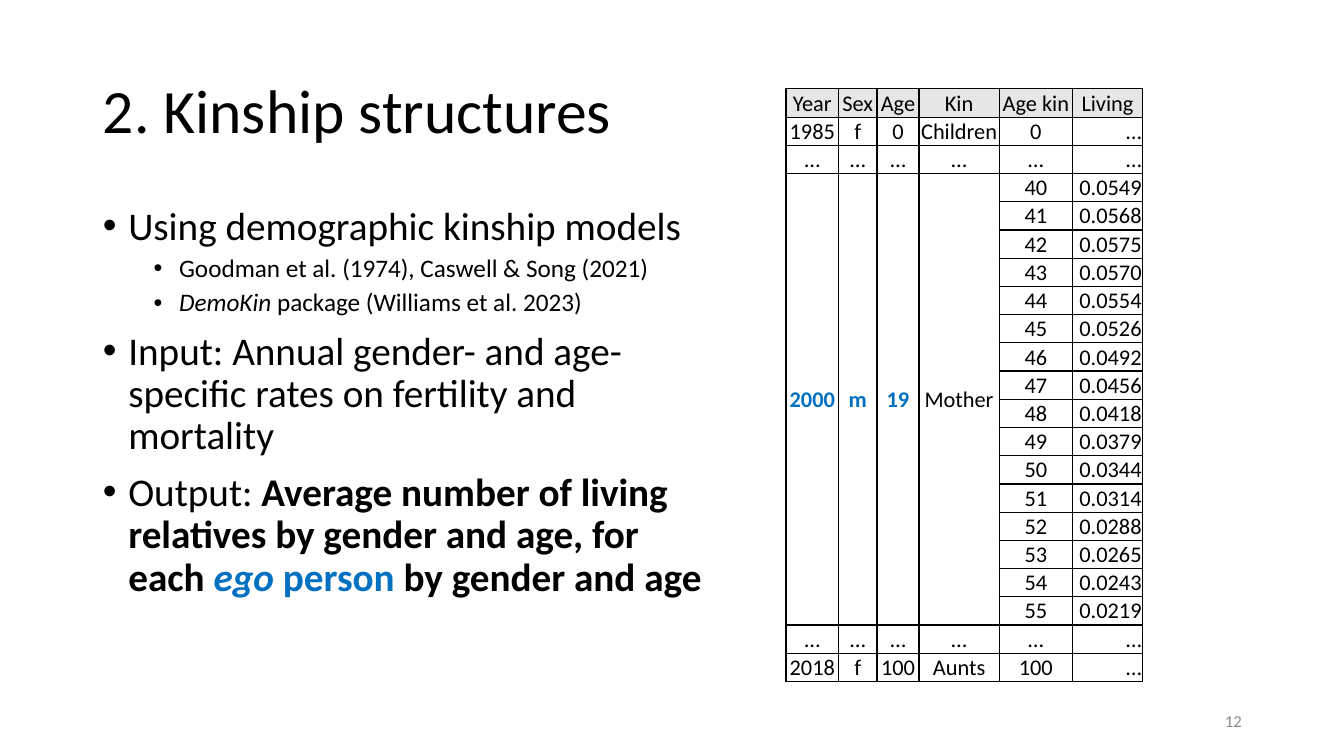
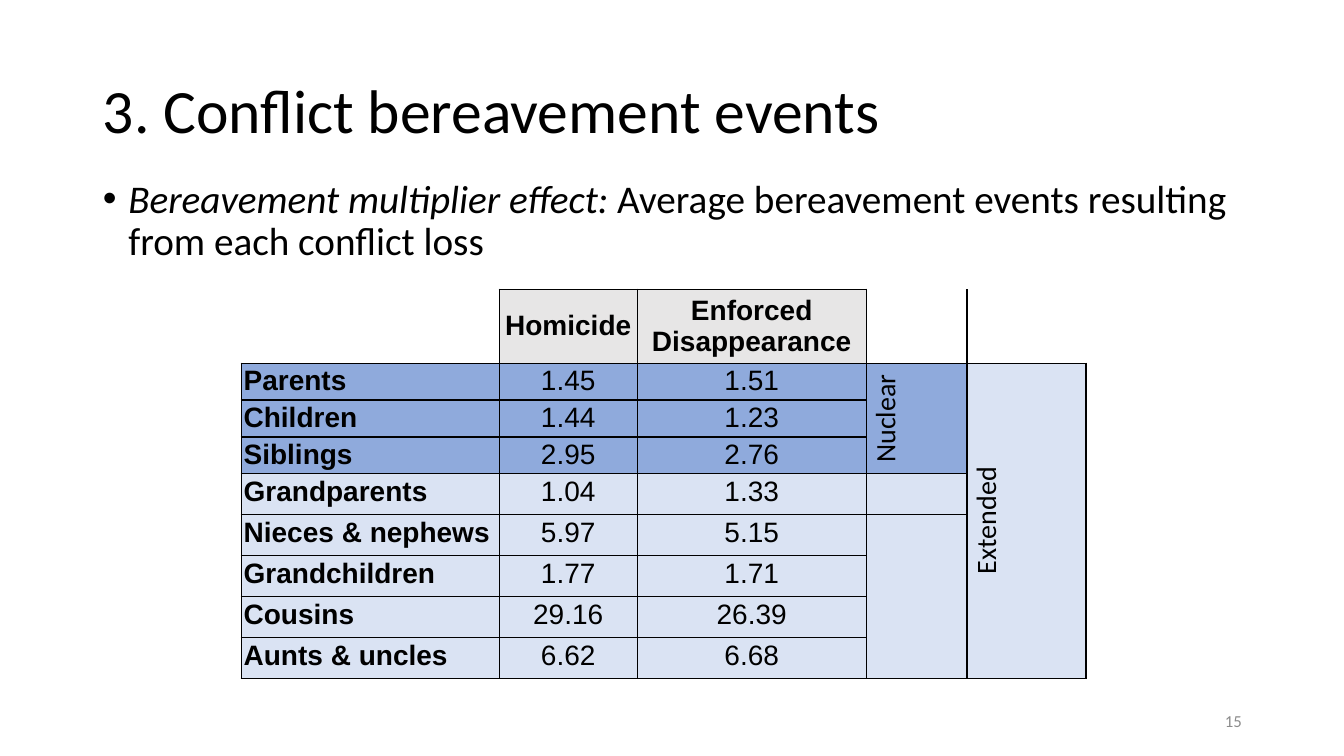
from dataclasses import dataclass
from typing import Any, NamedTuple

from lxml import etree
from pptx import Presentation
from pptx.dml.color import RGBColor
from pptx.enum.text import MSO_ANCHOR, MSO_AUTO_SIZE, PP_ALIGN
from pptx.oxml.ns import qn
from pptx.util import Cm, Pt

LEFT, CENTER, RIGHT = PP_ALIGN.LEFT, PP_ALIGN.CENTER, PP_ALIGN.RIGHT
TOP, MIDDLE, BOTTOM = MSO_ANCHOR.TOP, MSO_ANCHOR.MIDDLE, MSO_ANCHOR.BOTTOM
NO_AUTOFIT = MSO_AUTO_SIZE.NONE
TITLE_AND_CONTENT = 1
PLAIN_TABLE_STYLE = "{2D5ABB26-0587-4C30-8999-92F81FD0307C}"
ALL_SIDES = "LRTB"
ELLIPSIS = "…"


@dataclass(frozen=True)
class Theme:
    ink: str = "000000"
    accent: str = "0070C0"
    muted: str = "8C8C8C"
    header: str = "E7E6E6"
    nuclear: str = "8FAADC"
    extended: str = "DAE3F3"
    text_font: str = "Calibri"
    table_font: str = "Arial"
    title_size: int = 44
    body_size: int = 28
    detail_size: int = 18
    number_size: int = 12
    kin_size: int = 16
    multiplier_size: int = 20
    border_width: int = 1


THEME = Theme()


class Box(NamedTuple):
    """Left, top, width and height in centimetres."""
    left: float
    top: float
    width: float
    height: float


class Run(NamedTuple):
    text: str
    bold: bool = False
    italic: bool = False
    color: str = THEME.ink


class Bullet(NamedTuple):
    runs: list[Run]
    level: int = 0


class BulletStyle(NamedTuple):
    size: int
    space_before: int
    margin: float


@dataclass(frozen=True)
class Cell:
    text: str = ""
    size: int = THEME.kin_size
    font: str = THEME.text_font
    bold: bool = False
    color: str = THEME.ink
    align: Any = CENTER
    anchor: Any = MIDDLE
    fill: str = ""
    sides: str = ALL_SIDES
    rows: int = 1
    upward: bool = False


@dataclass(frozen=True)
class Grid:
    left: float
    top: float
    columns: list[float]
    rows: list[float]
    margin: float
    bottom_margin: float


TITLE_BOX = Box(2.34, 1.02, 29.21, 3.68)
NUMBER_BOX = Box(23.93, 17.65, 7.62, 1.02)
HANGING = 0.64
BULLET_STYLES = [
    BulletStyle(THEME.body_size, 10, HANGING),
    BulletStyle(THEME.detail_size, 5, 3 * HANGING),
]

KINSHIP_BULLETS = [
    Bullet([Run("Using demographic kinship models")]),
    Bullet([Run("Goodman et al. (1974), Caswell & Song (2021)")], 1),
    Bullet([Run("DemoKin ", italic=True), Run("package (Williams et al. 2023)")], 1),
    Bullet([Run("Input: Annual gender- and age-specific rates on fertility and mortality")]),
    Bullet([
        Run("Output: "),
        Run("Average number of living relatives by gender and age, for each ", bold=True),
        Run("ego", bold=True, italic=True, color=THEME.accent),
        Run(" person ", bold=True, color=THEME.accent),
        Run("by gender and age", bold=True),
    ]),
]
MULTIPLIER_BULLETS = [
    Bullet([
        Run("Bereavement multiplier effect: ", italic=True),
        Run("Average bereavement events resulting from each conflict loss"),
    ]),
]

KIN_HEADINGS = ["Year", "Sex", "Age", "Kin", "Age kin", "Living"]
GAP_ROW = [ELLIPSIS] * len(KIN_HEADINGS)
EGO = ["2000", "m", "19", "Mother"]
FIRST_MOTHER_AGE = 40
LIVING_MOTHERS = [
    "0.0549", "0.0568", "0.0575", "0.0570", "0.0554", "0.0526", "0.0492", "0.0456",
    "0.0418", "0.0379", "0.0344", "0.0314", "0.0288", "0.0265", "0.0243", "0.0219",
]
ROWS_BEFORE = [["1985", "f", "0", "Children", "0", ELLIPSIS], GAP_ROW]
ROWS_AFTER = [GAP_ROW, ["2018", "f", "100", "Aunts", "100", ELLIPSIS]]
KIN_ROW_COUNT = 1 + len(ROWS_BEFORE) + len(LIVING_MOTHERS) + len(ROWS_AFTER)
KIN_GRID = Grid(19.81, 2.24, [1.32, 0.97, 1.06, 2.02, 1.85, 1.76],
                [0.71] * KIN_ROW_COUNT, 0.02, 0)

NUCLEAR_KIN = [
    ("Parents", "1.45", "1.51"),
    ("Children", "1.44", "1.23"),
    ("Siblings", "2.95", "2.76"),
]
OTHER_KIN = [
    ("Grandparents", "1.04", "1.33"),
    ("Nieces & nephews", "5.97", "5.15"),
    ("Grandchildren", "1.77", "1.71"),
    ("Cousins", "29.16", "26.39"),
    ("Aunts & uncles", "6.62", "6.68"),
]
MULTIPLIER_GRID = Grid(
    6.08, 7.29, [6.5, 3.48, 5.77, 2.54, 3],
    [1.86] + [0.93] * len(NUCLEAR_KIN) + [1.02] * len(OTHER_KIN), 0.06, 0.06)


def apply_format(target: Any, values: dict[str, Any]) -> None:
    for name, value in values.items():
        setattr(target, name, value)


def add_run(paragraph: Any, run: Run, size: int, font: str = THEME.text_font) -> None:
    piece = paragraph.add_run()
    piece.text = run.text
    apply_format(piece.font, {"name": font, "size": Pt(size),
                              "bold": run.bold, "italic": run.italic})
    piece.font.color.rgb = RGBColor.from_string(run.color)


def place(shape: Any, box: Box) -> None:
    apply_format(shape, {side: Cm(length) for side, length in box._asdict().items()})


def write_line(shape: Any, box: Box, run: Run, size: int, paragraph_format: dict[str, Any]) -> None:
    """Fill a shape with a single vertically centred paragraph."""
    place(shape, box)
    apply_format(shape.text_frame, {"word_wrap": True, "auto_size": NO_AUTOFIT,
                                    "vertical_anchor": MIDDLE})
    paragraph = shape.text_frame.paragraphs[0]
    apply_format(paragraph, paragraph_format)
    add_run(paragraph, run, size)


def write_bullets(body: Any, box: Box, bullets: list[Bullet]) -> None:
    place(body, box)
    frame = body.text_frame
    apply_format(frame, {"word_wrap": True, "auto_size": NO_AUTOFIT, "vertical_anchor": TOP})
    for index, bullet in enumerate(bullets):
        paragraph = frame.add_paragraph() if index else frame.paragraphs[0]
        style = BULLET_STYLES[bullet.level]
        apply_format(paragraph, {"level": bullet.level, "line_spacing": 0.9,
                                 "space_before": Pt(style.space_before), "alignment": LEFT})
        properties = paragraph._p.get_or_add_pPr()
        properties.set("marL", str(Cm(style.margin)))
        properties.set("indent", str(-Cm(HANGING)))
        etree.SubElement(properties, qn("a:buFont")).set("typeface", "Arial")
        etree.SubElement(properties, qn("a:buChar")).set("char", "•")
        for run in bullet.runs:
            add_run(paragraph, run, style.size)


def add_content_slide(deck: Any, title: str, number: str, body_box: Box,
                      bullets: list[Bullet]) -> Any:
    slide = deck.slides.add_slide(deck.slide_layouts[TITLE_AND_CONTENT])
    write_line(slide.shapes.title, TITLE_BOX, Run(title), THEME.title_size,
               {"alignment": LEFT, "line_spacing": 0.9})
    write_bullets(slide.placeholders[1], body_box, bullets)
    page_number = slide.shapes.add_textbox(*map(Cm, NUMBER_BOX))
    write_line(page_number, NUMBER_BOX, Run(number, color=THEME.muted),
               THEME.number_size, {"alignment": RIGHT})
    return slide


def draw_borders(table_cell: Any, sides: str) -> None:
    properties = table_cell._tc.get_or_add_tcPr()
    ordered = [side for side in ALL_SIDES if side in sides]
    for position, side in enumerate(ordered):
        line = etree.Element(qn(f"a:ln{side}"), w=str(Pt(THEME.border_width)))
        fill = etree.SubElement(line, qn("a:solidFill"))
        etree.SubElement(fill, qn("a:srgbClr")).set("val", THEME.ink)
        properties.insert(position, line)


def fill_cell(table_cell: Any, cell: Cell, grid: Grid) -> None:
    if cell.fill:
        table_cell.fill.solid()
        table_cell.fill.fore_color.rgb = RGBColor.from_string(cell.fill)
    draw_borders(table_cell, cell.sides)
    if not cell.text:
        return
    margin = Cm(grid.margin)
    apply_format(table_cell, {"margin_left": margin, "margin_right": margin, "margin_top": margin,
                              "margin_bottom": Cm(grid.bottom_margin),
                              "vertical_anchor": cell.anchor})
    if cell.upward:
        table_cell._tc.get_or_add_tcPr().set("vert", "vert270")
    paragraph = table_cell.text_frame.paragraphs[0]
    paragraph.alignment = cell.align
    add_run(paragraph, Run(cell.text, cell.bold, color=cell.color), cell.size, cell.font)


def draw_table(slide: Any, grid: Grid, rows: list[list[Cell | None]]) -> None:
    """Draw the cells; None marks a place covered by a cell spanning from above."""
    frame = slide.shapes.add_table(
        len(grid.rows), len(grid.columns), Cm(grid.left), Cm(grid.top),
        Cm(sum(grid.columns)), Cm(sum(grid.rows)))
    table = frame.table
    apply_format(table, {"first_row": False, "horz_banding": False})
    table._tbl.tblPr.find(qn("a:tableStyleId")).text = PLAIN_TABLE_STYLE
    for column, width in zip(table.columns, grid.columns):
        column.width = Cm(width)
    for row, height in zip(table.rows, grid.rows):
        row.height = Cm(height)
    for r, row_cells in enumerate(rows):
        for c, cell in enumerate(row_cells):
            table_cell = table.cell(r, c)
            if cell is None:
                draw_borders(table_cell, ALL_SIDES)
                continue
            if cell.rows > 1:
                table_cell.merge(table.cell(r + cell.rows - 1, c))
            fill_cell(table_cell, cell, grid)


def kin_row(texts: list[str]) -> list[Cell | None]:
    *identity, kin_age, living = texts
    return [*map(Cell, identity), Cell(kin_age, anchor=BOTTOM),
            Cell(living, align=RIGHT, anchor=BOTTOM)]


def kin_rows() -> list[list[Cell | None]]:
    span = len(LIVING_MOTHERS)
    ego_cells = [Cell(text, bold=True, color=THEME.accent, rows=span) for text in EGO[:3]]
    ego_cells.append(Cell(EGO[3], rows=span))
    mothers = []
    for offset, living in enumerate(LIVING_MOTHERS):
        ages = kin_row([str(FIRST_MOTHER_AGE + offset), living])
        mothers.append([*([None] * len(EGO) if offset else ego_cells), *ages])
    header = [Cell(text, anchor=BOTTOM, fill=THEME.header) for text in KIN_HEADINGS]
    return [header, *map(kin_row, ROWS_BEFORE), *mothers, *map(kin_row, ROWS_AFTER)]


def multiplier_cell(text: str, **look: Any) -> Cell:
    return Cell(text, **{"size": THEME.multiplier_size, "font": THEME.table_font, **look})


def group_cell(text: str, fill: str, rows: int) -> Cell:
    return multiplier_cell(text, font=THEME.text_font, fill=fill, rows=rows, upward=True)


def multiplier_rows() -> list[list[Cell | None]]:
    headings = [multiplier_cell(text, bold=True, fill=THEME.header)
                for text in ("Homicide", "Enforced Disappearance")]
    rows = [[Cell(sides="RB"), *headings, Cell(sides="LB"), Cell(sides="B")]]
    kin = NUCLEAR_KIN + OTHER_KIN
    for index, (relative, *events) in enumerate(kin):
        is_nuclear = index < len(NUCLEAR_KIN)
        fill = THEME.nuclear if is_nuclear else THEME.extended
        nuclear = extended = None
        if index == 0:
            nuclear = group_cell("Nuclear", THEME.nuclear, len(NUCLEAR_KIN))
            extended = group_cell("Extended", THEME.extended, len(kin))
        elif not is_nuclear:
            edge = {len(NUCLEAR_KIN): "T", len(kin) - 1: "B"}.get(index, "")
            nuclear = Cell(fill=fill, sides="L" + edge)
        rows.append([
            multiplier_cell(relative, bold=True, align=LEFT, anchor=TOP, fill=fill),
            *(multiplier_cell(value, anchor=TOP, fill=fill) for value in events),
            nuclear, extended])
    return rows


def main() -> None:
    deck = Presentation()
    apply_format(deck, {"slide_width": Cm(33.87), "slide_height": Cm(19.05)})
    kinship = add_content_slide(deck, "2. Kinship structures", "12",
                                Box(2.34, 5.08, 15.72, 12.09), KINSHIP_BULLETS)
    draw_table(kinship, KIN_GRID, kin_rows())
    bereavement = add_content_slide(deck, "3. Conflict bereavement events", "15",
                                    Box(2.34, 4.39, 29.21, 4.09), MULTIPLIER_BULLETS)
    draw_table(bereavement, MULTIPLIER_GRID, multiplier_rows())
    deck.save("out.pptx")


if __name__ == "__main__":
    main()
